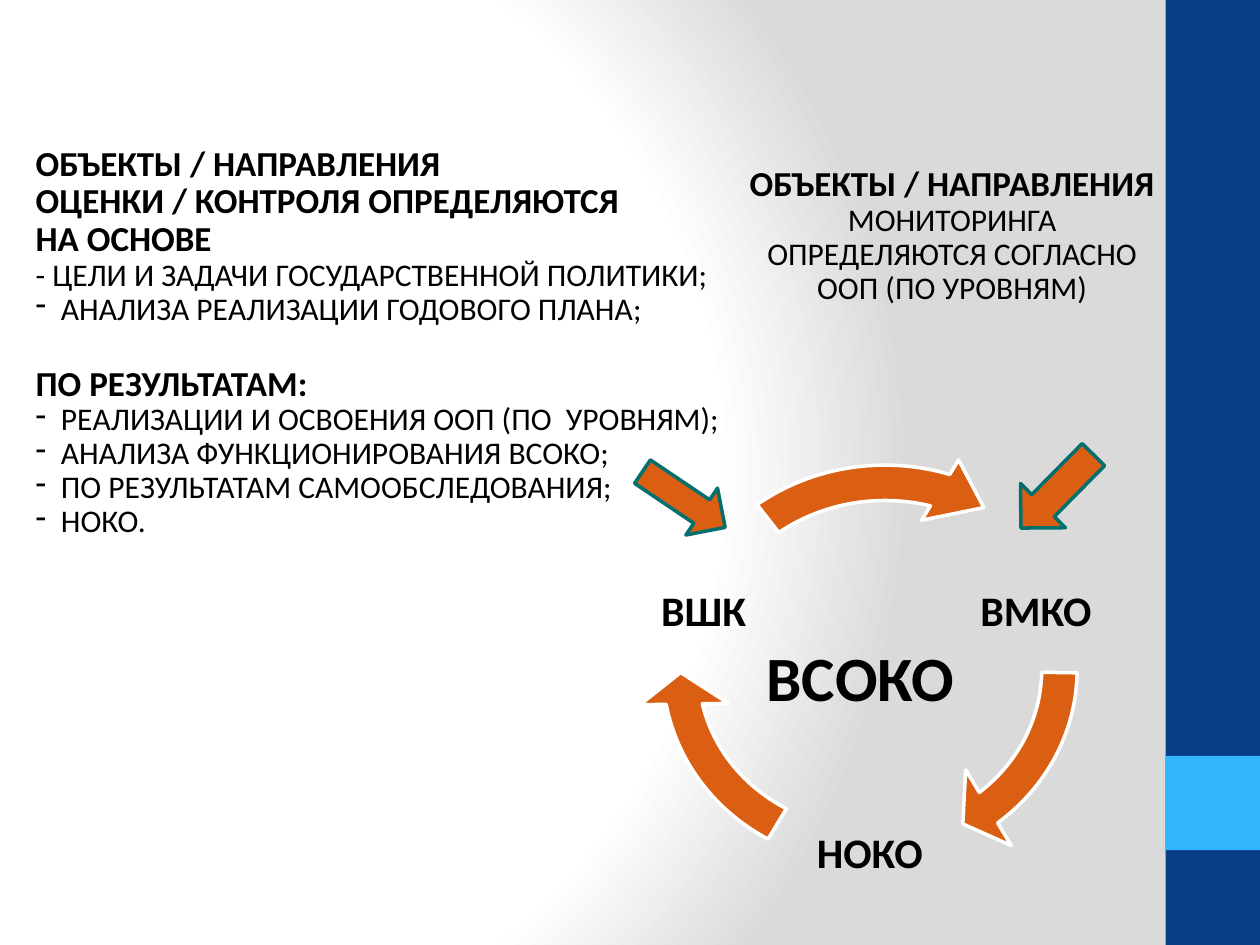
"""Build the slide on how the objects of school quality assessment are chosen."""
from dataclasses import dataclass

from lxml import etree
from pptx import Presentation
from pptx import util as u
from pptx.dml.color import RGBColor
from pptx.enum import shapes, text
from pptx.oxml import ns, parse_xml


@dataclass(frozen=True)
class Theme:
    font: str = "Calibri"
    ink: str = "000000"
    paper: str = "FFFFFF"
    shade: str = "DADADA"
    sidebar: str = "073E87"
    accent: str = "31B6FD"
    arrow: str = "DB5F13"
    pointer_edge: str = "03706E"
    body: int = 18
    heading: int = 20
    label: int = 24
    core: int = 36
    edge: int = 2
    inset: float = 0.16
    indent: float = 0.51
    spacing: float = 0.9


class SlideBuilder:
    def __init__(self, slide, theme):
        self.slide = slide
        self.theme = theme

    def background(self):
        t = self.theme
        stops = ((0, t.paper), (75, t.paper), (100, t.shade))
        stop_xml = "".join(
            f'<a:gs pos="{pos * 1000}"><a:srgbClr val="{color}"/></a:gs>'
            for pos, color in stops
        )
        gradient = parse_xml(
            f'<a:gradFill {ns.nsdecls("a")} rotWithShape="1"><a:gsLst>{stop_xml}</a:gsLst>'
            '<a:path path="circle"><a:fillToRect l="20000" t="50000" r="100000" b="50000"/>'
            "</a:path></a:gradFill>"
        )
        fill = self.slide.background.fill
        fill.solid()
        solid = self.slide.element.find(".//" + ns.qn("p:bgPr") + "/" + ns.qn("a:solidFill"))
        solid.getparent().replace(solid, gradient)

    def shape(self, kind, box, color, edge=None, rotation=0, adjustments=()):
        part = self.slide.shapes.add_shape(kind, *map(u.Cm, box))
        part.shadow.inherit = False
        part.fill.solid()
        part.fill.fore_color.rgb = RGBColor.from_string(color)
        if edge:
            part.line.color.rgb = RGBColor.from_string(edge)
            part.line.width = u.Pt(self.theme.edge)
        else:
            part.line.fill.background()
        part.rotation = rotation
        for index, value in enumerate(adjustments):
            part.adjustments[index] = value

    def style(self, font, size, bold):
        font.name = self.theme.font
        font.size = u.Pt(size)
        font.bold = bold
        font.color.rgb = RGBColor.from_string(self.theme.ink)

    def text_frame(self, box, inset=None):
        frame = self.slide.shapes.add_textbox(*map(u.Cm, box)).text_frame
        frame.word_wrap = True
        frame.vertical_anchor = text.MSO_ANCHOR.MIDDLE
        margin = u.Cm(self.theme.inset if inset is None else inset)
        frame.margin_left = frame.margin_right = margin
        frame.margin_top = frame.margin_bottom = margin
        return frame

    def label(self, box, wording, size, align=text.PP_ALIGN.CENTER, inset=None):
        paragraph = self.text_frame(box, inset).paragraphs[0]
        paragraph.text = wording
        paragraph.alignment = align
        self.style(paragraph.font, size, True)

    def run_on(self, box, parts):
        paragraph = self.text_frame(box).paragraphs[0]
        paragraph.alignment = text.PP_ALIGN.CENTER
        paragraph.line_spacing = self.theme.spacing
        for wording, size, bold in parts:
            run = paragraph.add_run()
            run.text = wording
            self.style(run.font, size, bold)

    def outline(self, box, sections, gap):
        frame = self.text_frame(box)
        paragraph = None
        for headings, plain, bullets in sections:
            rows = [(row, True, False) for row in headings]
            rows += [(row, False, False) for row in plain]
            rows += [(row, False, True) for row in bullets]
            for index, (wording, bold, bulleted) in enumerate(rows):
                first = paragraph is None
                paragraph = frame.paragraphs[0] if first else frame.add_paragraph()
                paragraph.text = wording
                paragraph.line_spacing = self.theme.spacing
                if index == 0 and not first:
                    paragraph.space_before = u.Pt(gap)
                self.style(paragraph.font, self.theme.heading if bold else self.theme.body, bold)
                if bulleted:
                    self.bullet(paragraph)

    def bullet(self, paragraph):
        properties = paragraph._p.get_or_add_pPr()
        indent = u.Cm(self.theme.indent)
        properties.set("marL", str(indent))
        properties.set("indent", str(-indent))
        mark = etree.Element(ns.qn("a:buChar"), char="-")
        defaults = properties.find(ns.qn("a:defRPr"))
        if defaults is None:
            properties.append(mark)
        else:
            defaults.addprevious(mark)


def main():
    deck = Presentation()
    deck.slide_width, deck.slide_height = u.Cm(25.4), u.Cm(19.05)
    theme = Theme()
    page = SlideBuilder(deck.slides.add_slide(deck.slide_layouts[6]), theme)
    kinds = shapes.MSO_SHAPE

    page.background()
    page.shape(kinds.RECTANGLE, (23.5, 0, 1.9, 19.05), theme.sidebar)
    page.shape(kinds.RECTANGLE, (23.5, 15.24, 1.9, 1.9), theme.accent)

    cycle_arrows = (
        (12.83, 9.04, (0.08, 5.77, 29.62, 0.53, 0.1)),
        (12.83, 9.04, (0.08, 5.77, 101.7, 72.62, 0.1)),
        (13.13, 9.02, (0.08, 8.63, 172.31, 139.24, 0.08)),
    )
    for left, top, adjustments in cycle_arrows:
        page.shape(kinds.CIRCULAR_ARROW, (left, top, 9.42, 8.92), theme.arrow,
                   theme.paper, adjustments=adjustments)

    stages = (("ВШК", 10.41), ("НОКО", 15.27), ("ВМКО", 10.41))
    for column, (stage, top) in enumerate(stages):
        page.label((12.19 + 3.35 * column, top, 3.99, 3.78), stage, theme.label)
    page.label((15.21, 12.73, 5, 1.8), "ВСОКО", theme.core, text.PP_ALIGN.LEFT, 0.25)

    page.outline((0.56, 2.59, 14.38, 8.64), (
        (("ОБЪЕКТЫ / НАПРАВЛЕНИЯ", "ОЦЕНКИ / КОНТРОЛЯ ОПРЕДЕЛЯЮТСЯ", "НА ОСНОВЕ"),
         ("- ЦЕЛИ И ЗАДАЧИ ГОСУДАРСТВЕННОЙ ПОЛИТИКИ;",),
         ("АНАЛИЗА РЕАЛИЗАЦИИ ГОДОВОГО ПЛАНА;",)),
        (("ПО РЕЗУЛЬТАТАМ:",),
         (),
         ("РЕАЛИЗАЦИИ И ОСВОЕНИЯ ООП (ПО  УРОВНЯМ);", "АНАЛИЗА ФУНКЦИОНИРОВАНИЯ ВСОКО;",
          "ПО РЕЗУЛЬТАТАМ САМООБСЛЕДОВАНИЯ;", "НОКО.")),
    ), gap=22)

    pointers = (((12.78, 9.5, 2.01, 1.14), 34), ((20.27, 9.27, 2.08, 1.27), 134.6))
    for box, rotation in pointers:
        page.shape(kinds.RIGHT_ARROW, box, theme.arrow, theme.pointer_edge, rotation)

    page.run_on((14.94, 2.01, 8.51, 5.51), (
        ("ОБЪЕКТЫ / НАПРАВЛЕНИЯ ", theme.heading, True),
        ("МОНИТОРИНГА ОПРЕДЕЛЯЮТСЯ СОГЛАСНО ООП (ПО УРОВНЯМ)", theme.body, False),
    ))

    deck.save("out.pptx")


if __name__ == "__main__":
    main()
